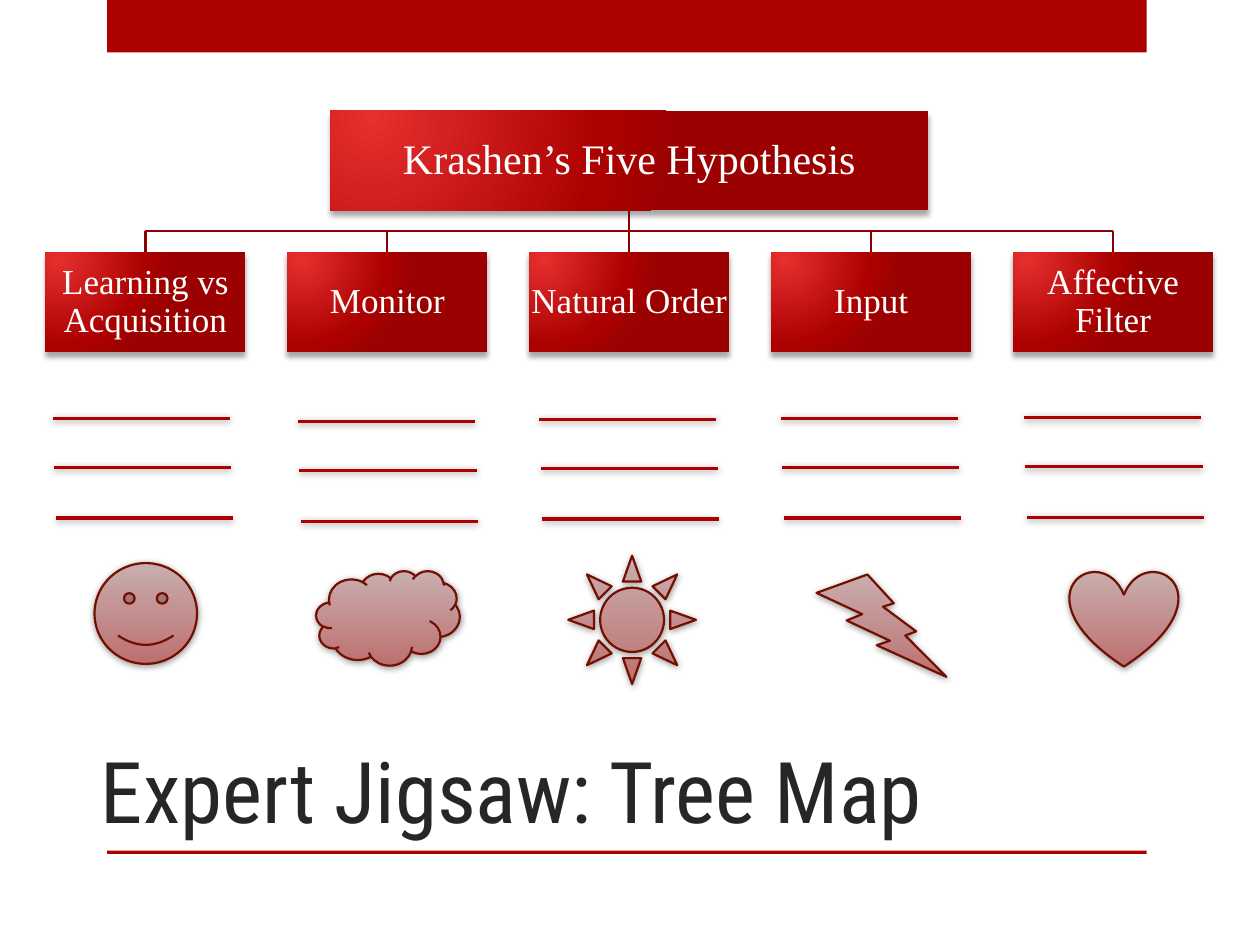
import pptx
import pptx.util
import pptx.dml.color
import pptx.enum.shapes
import pptx.enum.text
import pptx.oxml
import pptx.oxml.ns

Pt = pptx.util.Pt
MSO = pptx.enum.shapes.MSO_SHAPE
STRAIGHT = pptx.enum.shapes.MSO_CONNECTOR.STRAIGHT
NS = pptx.oxml.ns.nsdecls("a")

BOX_FILL = f"""<a:gradFill {NS} rotWithShape="1"><a:gsLst>
<a:gs pos="0"><a:srgbClr val="E62F2F"/></a:gs>
<a:gs pos="76000"><a:srgbClr val="AD0101"/></a:gs>
<a:gs pos="100000"><a:srgbClr val="9C0101"/></a:gs></a:gsLst>
<a:path path="circle"><a:fillToRect l="15000" t="15000" r="100000" b="100000"/></a:path>
</a:gradFill>"""
SHADOW = """<a:outerShdw blurRad="{}" dist="{}" dir="{}" rotWithShape="0">
<a:srgbClr val="000000"><a:alpha val="{}"/></a:srgbClr></a:outerShdw>"""
BOX_SHADOW = SHADOW.format(Pt(3), Pt(3), 90 * 60000, 35000)
SOFT_SHADOW = SHADOW.format(Pt(4), Pt(1), 88 * 60000, 40000)


def color(hex_value):
    return pptx.dml.color.RGBColor.from_string(hex_value)


def finish(item, line_color, line_width, shadow=""):
    if line_color:
        item.line.color.rgb = color(line_color)
        item.line.width = Pt(line_width)
    else:
        item.line.fill.background()
    effects = f"<a:effectLst {NS}>{shadow}</a:effectLst>"
    item._element.spPr.append(pptx.oxml.parse_xml(effects))


deck = pptx.Presentation()
deck.slide_width, deck.slide_height = Pt(720), Pt(540)
slide = deck.slides.add_slide(deck.slide_layouts[5])
shapes = slide.shapes

for top, height in [(0, 30), (486, 2)]:
    band = shapes.add_shape(MSO.RECTANGLE, Pt(61.2), Pt(top), Pt(594), Pt(height))
    band.fill.solid()
    band.fill.fore_color.rgb = color("AD0101")
    finish(band, None, 0)

title = shapes.title
title.left, title.top, title.width, title.height = Pt(50.4), Pt(357.8), Pt(534.2), Pt(126)
title.text_frame.text = "Expert Jigsaw: Tree Map"
title.text_frame.vertical_anchor = pptx.enum.text.MSO_ANCHOR.BOTTOM
title.text_frame.auto_size = pptx.enum.text.MSO_AUTO_SIZE.NONE
heading = title.text_frame.paragraphs[0]
heading.alignment = pptx.enum.text.PP_ALIGN.LEFT
heading.runs[0].font.name = "Roboto Condensed"
heading.runs[0].font.size = Pt(48.6)
heading.runs[0].font.color.rgb = color("262626")

center, pitch, box_width, box_height = 359.6, 138.24, 114.4, 57
root_width, root_top, branch_top = 341.4, 63.2, 144
hypotheses = ["Learning vs Acquisition", "Monitor", "Natural Order", "Input", "Affective Filter"]
column_centers = [center + (i - 2) * pitch for i in range(5)]

nodes = [("Krashen’s Five Hypothesis", center, root_top, root_width, 24, 1.5)]
for hypothesis, x in zip(hypotheses, column_centers):
    nodes.append((hypothesis, x, branch_top, box_width, 20, 0.9))

boxes = []
for label, x, top, width, size, inset in nodes:
    box = shapes.add_shape(MSO.RECTANGLE, Pt(x - width / 2), Pt(top), Pt(width), Pt(box_height))
    box._element.spPr.append(pptx.oxml.parse_xml(BOX_FILL))
    finish(box, None, 0, BOX_SHADOW)
    frame = box.text_frame
    frame.text = label
    frame.word_wrap = True
    frame.vertical_anchor = pptx.enum.text.MSO_ANCHOR.MIDDLE
    frame.margin_left = frame.margin_right = Pt(inset)
    frame.margin_top = frame.margin_bottom = Pt(inset)
    paragraph = frame.paragraphs[0]
    paragraph.alignment = pptx.enum.text.PP_ALIGN.CENTER
    paragraph.line_spacing = 0.9
    font = paragraph.runs[0].font
    font.name, font.size = "Times New Roman", Pt(size)
    font.color.rgb = color("FFFFFF")
    boxes.append(box)

root, branches = boxes[0], boxes[1:]
root_bottom = root_top + box_height
rail_y = (root_bottom + branch_top) / 2
rail = shapes.add_connector(
    STRAIGHT, Pt(column_centers[0]), Pt(rail_y), Pt(column_centers[-1]), Pt(rail_y))
finish(rail, "8B0101", 1.25)
for branch, x in zip(branches, column_centers):
    drop = shapes.add_connector(STRAIGHT, Pt(x), Pt(rail_y), Pt(x), Pt(branch_top))
    if x == center:
        drop.begin_connect(root, 2)
    drop.end_connect(branch, 0)
    finish(drop, "8B0101", 1.25)

answer_columns = [(30.2, 239), (170.3, 241), (308.2, 239.6), (446.2, 239), (585.2, 238.8)]
for left, top in answer_columns:
    for row, drop_height in enumerate([0, 28, 57]):
        x, y = left + row * 0.8, top + drop_height
        answer = shapes.add_connector(STRAIGHT, Pt(x), Pt(y), Pt(x + 101.2), Pt(y))
        finish(answer, "AD0101", 1.75, SOFT_SHADOW)

symbols = [
    (MSO.SMILEY_FACE, 54, 321.8, 58.6, 57.6),
    (MSO.CLOUD, 180.7, 326.2, 82.1, 54),
    (MSO.SUN, 324.7, 317.5, 73, 73.4),
    (MSO.LIGHTNING_BOLT, 466.6, 328.3, 74.2, 58.5),
    (MSO.HEART, 611.3, 326.2, 61.9, 54.7),
]
for kind, left, top, width, height in symbols:
    symbol = shapes.add_shape(kind, Pt(left), Pt(top), Pt(width), Pt(height))
    symbol.fill.gradient()
    symbol.fill.gradient_angle = 270
    for stop, (position, shade) in zip(symbol.fill.gradient_stops, [(0, "C9AEAE"), (1, "BD7070")]):
        stop.position = position
        stop.color.rgb = color(shade)
    finish(symbol, "730E00", 1.25, SOFT_SHADOW)

deck.save("out.pptx")
